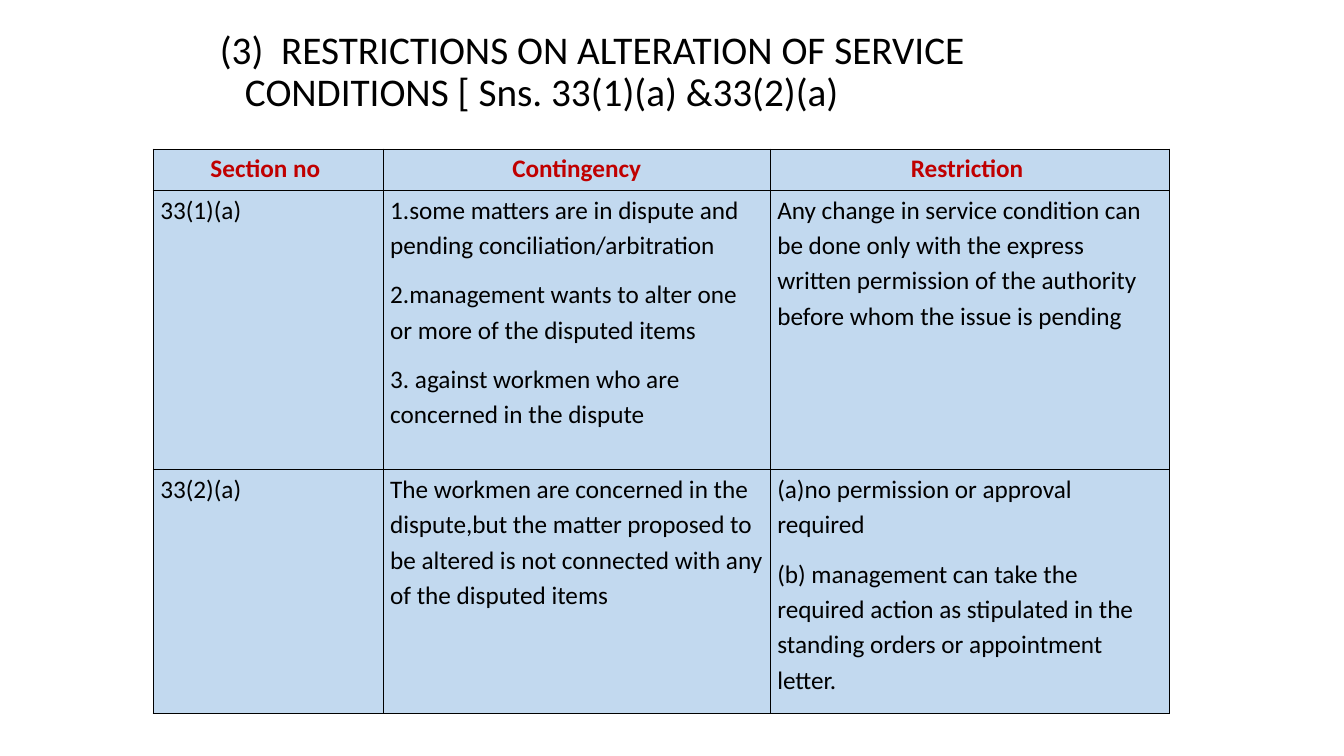
from lxml import etree
from pptx import Presentation
from pptx.dml.color import RGBColor
from pptx.enum.text import MSO_ANCHOR, MSO_AUTO_SIZE, PP_ALIGN
from pptx.oxml.ns import qn
from pptx.util import Inches, Pt

LEFT, CENTER = PP_ALIGN.LEFT, PP_ALIGN.CENTER
TOP = MSO_ANCHOR.TOP
NO_AUTOFIT = MSO_AUTO_SIZE.NONE
TITLE_ONLY = 5

COLORS = {"text": "000000", "heading": "C00000", "cell": "9DC3E6", "border": "000000"}

HEADING = "(3)  RESTRICTIONS ON ALTERATION OF SERVICE CONDITIONS [ Sns. 33(1)(a) &33(2)(a)"
COLUMN_WIDTHS = [2.28, 3.84, 3.96]
ROW_HEIGHTS = [0.41, 2.77, 2.42]
SECTIONS = [
    ["Section no ", "Contingency", "Restriction "],
    [
        "33(1)(a)",
        "1.some matters are in dispute and pending conciliation/arbitration\n"
        "2.management wants to alter one or more of the disputed items\n"
        "3. against workmen who are concerned in the dispute",
        "Any change in service condition can be done only with the express "
        "written permission of the authority before whom the issue is pending",
    ],
    [
        "33(2)(a)",
        "The workmen are concerned in the dispute,but the matter proposed "
        "to be altered is not connected with any of the disputed items",
        "(a)no permission or approval required\n"
        "(b) management can take the required action as stipulated in the "
        "standing orders or appointment letter.",
    ],
]


class SlideBuilder:
    font_name = "Calibri"
    cell_opacity = 62
    border_width = Pt(1)

    def __init__(self, slide):
        self.slide = slide

    def style_paragraph(self, paragraph, size, color, align=LEFT, bold=False):
        paragraph.alignment = align
        for run in paragraph.runs:
            run.font.name = self.font_name
            run.font.size = Pt(size)
            run.font.bold = bold
            run.font.color.rgb = RGBColor.from_string(COLORS[color])

    def add_title(self, text, left, top, width, height):
        title = self.slide.shapes.title
        title.left, title.top = Inches(left), Inches(top)
        title.width, title.height = Inches(width), Inches(height)
        frame = title.text_frame
        frame.text = text
        frame.word_wrap = True
        frame.auto_size = NO_AUTOFIT
        frame.vertical_anchor = TOP
        paragraph = frame.paragraphs[0]
        paragraph.line_spacing = 0.9
        self.style_paragraph(paragraph, 28, "text")
        hanging = paragraph._p.get_or_add_pPr()
        hanging.set("marL", str(Inches(0.25)))
        hanging.set("indent", str(-Inches(0.25)))

    def add_table(self, rows, left, top, widths, heights):
        table = self.slide.shapes.add_table(
            len(rows), len(widths), Inches(left), Inches(top),
            Inches(sum(widths)), Inches(sum(heights)),
        ).table
        table.horz_banding = False
        for column, width in zip(table.columns, widths):
            column.width = Inches(width)
        for row, height in zip(table.rows, heights):
            row.height = Inches(height)
        for r, texts in enumerate(rows):
            for c, text in enumerate(texts):
                self.fill_cell(table.cell(r, c), text, is_header=r == 0)

    def fill_cell(self, cell, text, is_header):
        cell.margin_left = cell.margin_right = Inches(0.07)
        cell.margin_top = cell.margin_bottom = 0
        cell.vertical_anchor = TOP
        cell.text_frame.text = text
        for paragraph in cell.text_frame.paragraphs:
            paragraph.line_spacing = 1.15
            paragraph.space_after = Pt(10)
            if is_header:
                self.style_paragraph(paragraph, 18, "heading", CENTER, bold=True)
            else:
                self.style_paragraph(paragraph, 18, "text")
        cell.fill.solid()
        cell.fill.fore_color.rgb = RGBColor.from_string(COLORS["cell"])
        self.finish_cell(cell)

    def finish_cell(self, cell):
        """Make the cell fill translucent and draw its four borders."""
        properties = cell._tc.get_or_add_tcPr()
        fill_color = properties.find(qn("a:solidFill")).find(qn("a:srgbClr"))
        etree.SubElement(fill_color, qn("a:alpha"), val=str(self.cell_opacity * 1000))
        for position, side in enumerate(("a:lnL", "a:lnR", "a:lnT", "a:lnB")):
            border = etree.Element(qn(side), w=str(self.border_width))
            line_fill = etree.SubElement(border, qn("a:solidFill"))
            etree.SubElement(line_fill, qn("a:srgbClr"), val=COLORS["border"])
            properties.insert(position, border)


def main():
    presentation = Presentation()
    presentation.slide_width = Inches(13.33)
    presentation.slide_height = Inches(7.5)
    slide = presentation.slides.add_slide(presentation.slide_layouts[TITLE_ONLY])
    builder = SlideBuilder(slide)
    builder.add_title(HEADING, 2.08, 0.25, 9.08, 1.1)
    builder.add_table(SECTIONS, 1.52, 1.48, COLUMN_WIDTHS, ROW_HEIGHTS)
    presentation.save("out.pptx")


if __name__ == "__main__":
    main()
